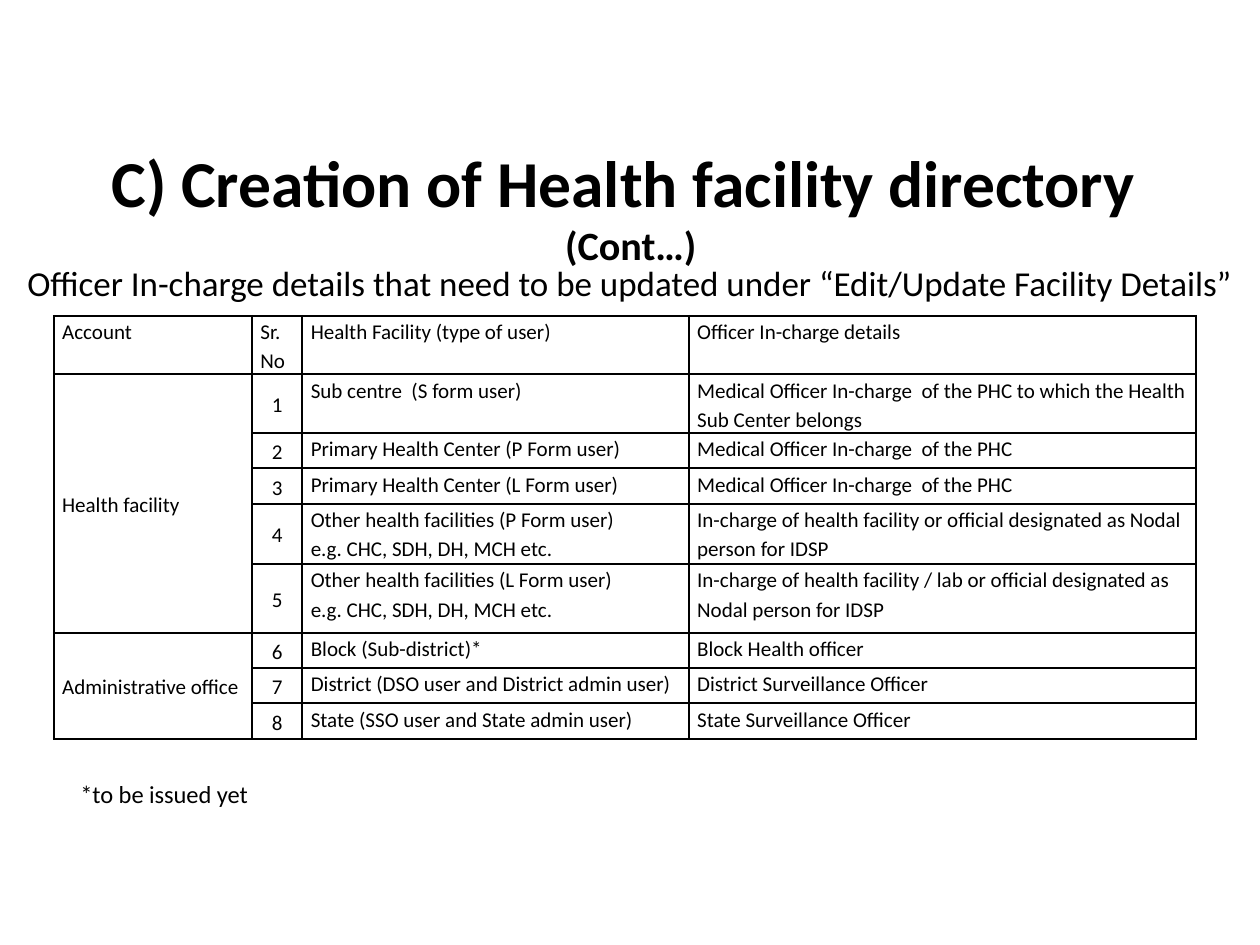
from dataclasses import dataclass

from lxml import etree
from pptx import Presentation
from pptx.dml.color import RGBColor
from pptx.enum.text import MSO_ANCHOR, PP_ALIGN
from pptx.oxml.ns import qn
from pptx.util import Inches, Pt

LEFT, CENTER = PP_ALIGN.LEFT, PP_ALIGN.CENTER
TOP, MIDDLE = MSO_ANCHOR.TOP, MSO_ANCHOR.MIDDLE
BLACK = RGBColor(0x00, 0x00, 0x00)
FONT = "Calibri"
SLIDE_WIDTH = 7.5
SLIDE_HEIGHT = SLIDE_WIDTH * 3 / 4
TITLE_ONLY_LAYOUT = 5

# Table grid, in inches
TABLE_LEFT, TABLE_TOP = 0.32, 1.88
COLUMN_WIDTHS = (1.18, 0.3, 2.3, 3.02)
HEADER_HEIGHT = 0.34
HEADERS = ("Account", "Sr. No", "Health Facility (type of user)", "Officer In-charge details")


@dataclass(frozen=True)
class Run:
    text: str
    size: float
    bold: bool = False


@dataclass(frozen=True)
class TextBlock:
    box: tuple[float, float, float, float]
    runs: tuple[Run, ...]
    align: PP_ALIGN = LEFT
    anchor: MSO_ANCHOR = TOP
    insets: tuple[float, float] = (0.1, 0.05)


@dataclass(frozen=True)
class Facility:
    user_type: str
    officer: str
    height: float = 0.21


@dataclass(frozen=True)
class Account:
    name: str
    facilities: tuple[Facility, ...]


TITLE = TextBlock(
    (0, 1.48, SLIDE_WIDTH, 0.4),
    (Run("Officer In-charge details that need to be updated under “Edit/Update Facility Details”", 15),),
    CENTER, MIDDLE)
HEADING = TextBlock(
    (0.38, 0.87, 6.75, 0.7),
    (Run("C) Creation of Health facility directory  ", 28.1, True), Run("(Cont…)", 17.2, True)),
    CENTER, MIDDLE, (0.07, 0.04))
FOOTNOTE = TextBlock((0.38, 4.59, 2.55, 0.28), (Run("*to be issued yet", 10.5),))

ACCOUNTS = (
    Account("Health facility", (
        Facility("Sub centre  (S form user)",
                 "Medical Officer In-charge  of the PHC to which the Health Sub Center belongs", 0.33),
        Facility("Primary Health Center (P Form user)", "Medical Officer In-charge  of the PHC"),
        Facility("Primary Health Center (L Form user)", "Medical Officer In-charge  of the PHC"),
        Facility("Other health facilities (P Form user)\ne.g. CHC, SDH, DH, MCH etc.",
                 "In-charge of health facility or official designated as Nodal person for IDSP", 0.36),
        Facility("Other health facilities (L Form user)\ne.g. CHC, SDH, DH, MCH etc.",
                 "In-charge of health facility / lab or official designated as Nodal person for IDSP", 0.41),
    )),
    Account("Administrative office", (
        Facility("Block (Sub-district)*", "Block Health officer"),
        Facility("District (DSO user and District admin user)", "District Surveillance Officer"),
        Facility("State (SSO user and State admin user)", "State Surveillance Officer"),
    )),
)


def apply_format(target, values: dict) -> None:
    for name, value in values.items():
        setattr(target, name, value)


def format_font(font, size: float, bold: bool = False) -> None:
    apply_format(font, {"name": FONT, "size": Pt(size), "bold": bold})
    font.color.rgb = BLACK


def write_block(shape, block: TextBlock) -> None:
    """Place a shape and fill it with one formatted paragraph."""
    left, top, width, height = (Inches(length) for length in block.box)
    apply_format(shape, {"left": left, "top": top, "width": width, "height": height})
    side, edge = (Inches(inset) for inset in block.insets)
    apply_format(shape.text_frame, {
        "word_wrap": True, "vertical_anchor": block.anchor,
        "margin_left": side, "margin_right": side, "margin_top": edge, "margin_bottom": edge})
    paragraph = shape.text_frame.paragraphs[0]
    paragraph.alignment = block.align
    for part in block.runs:
        run = paragraph.add_run()
        run.text = part.text
        format_font(run.font, part.size, part.bold)


def add_borders(cell) -> None:
    properties = cell._tc.get_or_add_tcPr()
    for index, side in enumerate(("a:lnL", "a:lnR", "a:lnT", "a:lnB")):
        line = etree.Element(qn(side), w=str(Pt(1)))
        fill = etree.SubElement(line, qn("a:solidFill"))
        etree.SubElement(fill, qn("a:srgbClr"), val=str(BLACK))
        properties.insert(index, line)


def write_cell(cell, text: str, align: PP_ALIGN = LEFT, anchor: MSO_ANCHOR = TOP) -> None:
    cell.text = text
    cell.vertical_anchor = anchor
    for paragraph in cell.text_frame.paragraphs:
        apply_format(paragraph, {"alignment": align, "line_spacing": 1.15})
        for run in paragraph.runs:
            format_font(run.font, 9)


def add_directory_table(slide) -> None:
    heights = [HEADER_HEIGHT] + [facility.height for account in ACCOUNTS for facility in account.facilities]
    table = slide.shapes.add_table(
        len(heights), len(COLUMN_WIDTHS), Inches(TABLE_LEFT), Inches(TABLE_TOP),
        Inches(sum(COLUMN_WIDTHS)), Inches(sum(heights))).table
    apply_format(table, {"first_row": False, "horz_banding": False})
    for column, width in zip(table.columns, COLUMN_WIDTHS):
        column.width = Inches(width)
    for row, height in zip(table.rows, heights):
        row.height = Inches(height)

    # Plain cells with a full grid of lines
    for cell in table.iter_cells():
        apply_format(cell, {"margin_left": Inches(0.05), "margin_right": Inches(0.05),
                            "margin_top": 0, "margin_bottom": 0})
        cell.fill.background()
        add_borders(cell)
        format_font(cell.text_frame.paragraphs[0].font, 9)

    # Header row, then one merged account cell per group
    for column_index, header in enumerate(HEADERS):
        write_cell(table.cell(0, column_index), header)
    row_index = 1
    for account in ACCOUNTS:
        account_cell = table.cell(row_index, 0)
        account_cell.merge(table.cell(row_index + len(account.facilities) - 1, 0))
        write_cell(account_cell, account.name, anchor=MIDDLE)
        for facility in account.facilities:
            write_cell(table.cell(row_index, 1), str(row_index), CENTER, MIDDLE)
            write_cell(table.cell(row_index, 2), facility.user_type)
            write_cell(table.cell(row_index, 3), facility.officer)
            row_index += 1


def main() -> None:
    presentation = Presentation()
    apply_format(presentation, {"slide_width": Inches(SLIDE_WIDTH), "slide_height": Inches(SLIDE_HEIGHT)})
    slide = presentation.slides.add_slide(presentation.slide_layouts[TITLE_ONLY_LAYOUT])
    write_block(slide.shapes.title, TITLE)
    add_directory_table(slide)
    for block in (HEADING, FOOTNOTE):
        write_block(slide.shapes.add_textbox(0, 0, 0, 0), block)
    presentation.save("out.pptx")


if __name__ == "__main__":
    main()
